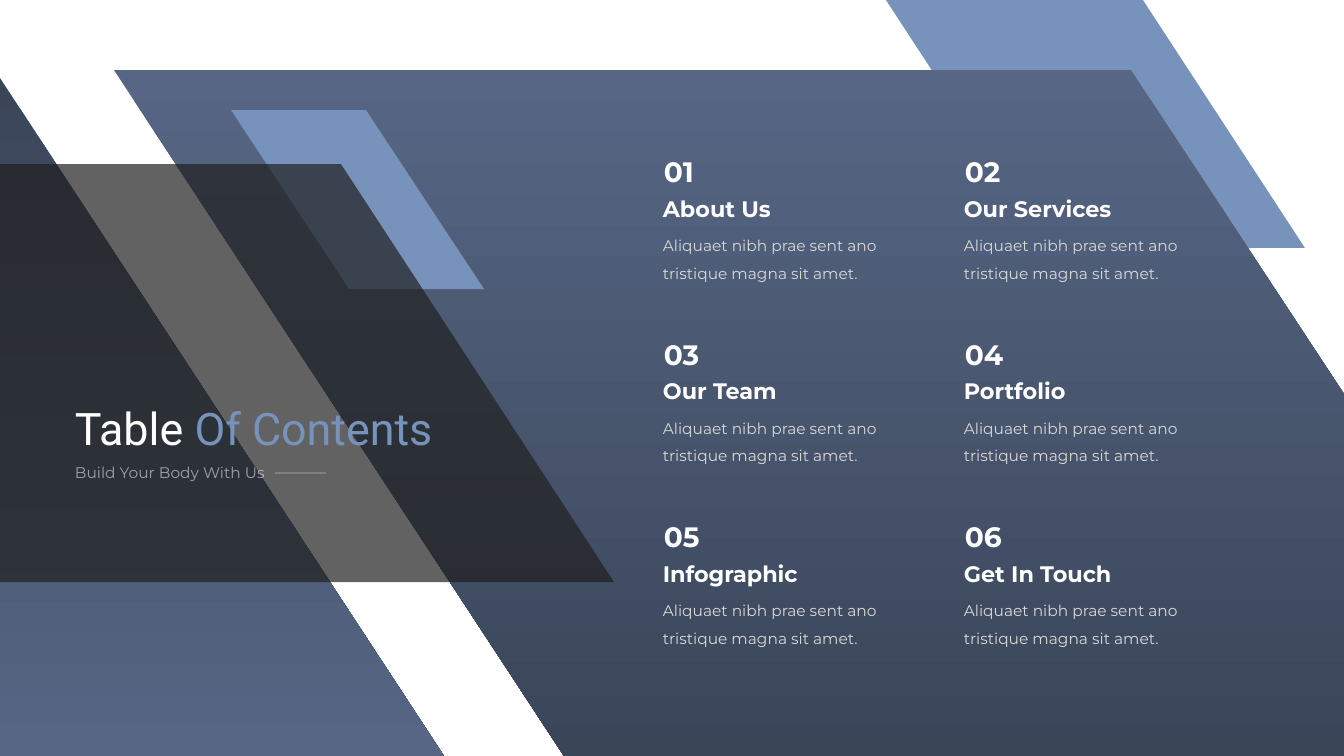
from dataclasses import dataclass

from lxml import etree
from pptx import Presentation
from pptx import util as u
from pptx.dml.color import RGBColor
from pptx.enum import shapes, text
from pptx.oxml import ns

WIDTH, HEIGHT = 1344, 756
EMU_PER_PX = 12192000 / WIDTH


@dataclass(frozen=True)
class Theme:
    white: str = "FFFFFF"
    accent: str = "7793BB"
    slate: str = "566684"
    deep: str = "3A4558"
    shade: str = "202020"
    pale: str = "D9D9D9"
    shade_alpha: int = 70
    muted_alpha: int = 55
    title: tuple = ("Roboto", 32, False)
    number: tuple = ("Montserrat", 20, True)
    heading: tuple = ("Montserrat", 16, True)
    body: tuple = ("Montserrat", 11, False)


THEME = Theme()
BLURB = "Aliquaet nibh prae sent ano tristique magna sit amet."
TOPICS = [
    ("01", 50, "About Us", 135),
    ("02", 56, "Our Services", 182),
    ("03", 56, "Our Team", 151),
    ("04", 59, "Portfolio", 135),
    ("05", 56, "Infographic", 172),
    ("06", 57, "Get In Touch", 172),
]


def px(length):
    return u.Emu(round(length * EMU_PER_PX))


def apply(target, values):
    for name, value in values.items():
        setattr(target, name, value)


def set_alpha(element, percent):
    for color in element.iter(ns.qn("a:srgbClr")):
        etree.SubElement(color, ns.qn("a:alpha"), val=str(percent * 1000))


def add_panel(slide, box, corners, colors, alpha=None):
    left, top = box
    points = [(left + x, top + y) for x, y in corners]
    outline = slide.shapes.build_freeform(*points[0], scale=EMU_PER_PX)
    outline.add_line_segments(points[1:], close=True)
    panel = outline.convert_to_shape()
    panel.shadow.inherit = False
    panel.line.fill.background()
    if len(colors) == 1:
        panel.fill.solid()
        panel.fill.fore_color.rgb = RGBColor.from_string(colors[0])
    else:
        panel.fill.gradient()
        panel.fill.gradient_angle = 270
        for stop, color in zip(panel.fill.gradient_stops, colors):
            stop.color.rgb = RGBColor.from_string(color)
    if alpha:
        set_alpha(panel.element.spPr, alpha)


def add_words(slide, box, style, runs, wrap=True, spacing=None, alpha=None):
    words = slide.shapes.add_textbox(*map(px, box))
    apply(words.text_frame, {
        "word_wrap": wrap,
        "auto_size": text.MSO_AUTO_SIZE.SHAPE_TO_FIT_TEXT,
    })
    paragraph = words.text_frame.paragraphs[0]
    if spacing:
        paragraph.line_spacing = spacing
    face, size, bold = style
    for wording, color in runs:
        run = paragraph.add_run()
        run.text = wording
        apply(run.font, {"name": face, "size": u.Pt(size), "bold": bold})
        run.font.color.rgb = RGBColor.from_string(color)
    if alpha:
        set_alpha(words.element, alpha)


def add_backdrop(slide, box):
    left, top, width, height = box
    gradient = (THEME.slate, THEME.deep)
    add_panel(slide, (left + 886, top),
              [(0, 0), (257, 0), (419, 248), (162, 248)], (THEME.accent,))
    add_panel(slide, (left + 114, top + 70),
              [(0, 0), (1017, 0), (width - 114, 324),
               (width - 114, height - 70), (450, height - 70)], gradient)
    add_panel(slide, (left, top + 78),
              [(0, 0), (0, height - 78), (444, height - 78)], gradient[::-1])
    add_panel(slide, (left + 231, top + 110),
              [(0, 0), (135, 0), (253, 179), (118, 179)], (THEME.accent,))


def add_title(slide, box):
    left, top, width, height = box
    add_panel(slide, (left, top),
              [(0, 0), (341, 0), (width, height), (0, height)],
              (THEME.shade,), THEME.shade_alpha)
    add_words(slide, (left + 65, top + 232, 412, 65), THEME.title,
              [("Table ", THEME.white), ("Of Contents", THEME.accent)])
    add_words(slide, (left + 65, top + 294, 213, 29), THEME.body,
              [("Build Your Body With Us", THEME.white)],
              wrap=False, alpha=THEME.muted_alpha)
    dash = slide.shapes.add_connector(
        shapes.MSO_CONNECTOR.STRAIGHT,
        px(left + 275), px(top + 309), px(left + 326), px(top + 309))
    dash.line.width = u.Pt(0.5)
    dash.line.color.rgb = RGBColor.from_string(THEME.white)
    set_alpha(dash.element.spPr, THEME.muted_alpha)
    etree.SubElement(dash.element.spPr, ns.qn("a:effectLst"))


def add_topic(slide, box, topic):
    left, top, width = box
    number, number_width, heading, heading_width = topic
    add_words(slide, (left + 1, top, number_width, 44), THEME.number,
              [(number, THEME.white)], wrap=False)
    add_words(slide, (left, top + 40, heading_width, 37), THEME.heading,
              [(heading, THEME.white)])
    add_words(slide, (left, top + 72, width, 64), THEME.body,
              [(BLURB, THEME.pale)], spacing=1.5)


def add_topics(slide, box):
    left, top, width, height = box
    topic_width = 259
    column_step = width - topic_width
    row_step = (height - 136) / 2
    for index, topic in enumerate(TOPICS):
        row, column = divmod(index, 2)
        add_topic(slide, (left + column * column_step,
                          top + row * row_step, topic_width), topic)


def main():
    deck = Presentation()
    apply(deck, {"slide_width": px(WIDTH), "slide_height": px(HEIGHT)})
    contents = deck.slides.add_slide(deck.slide_layouts[6])
    add_backdrop(contents, (0, 0, WIDTH, HEIGHT))
    add_title(contents, (0, 164, 614, 418))
    add_topics(contents, (653, 150, 560, 501))
    deck.save("out.pptx")


if __name__ == "__main__":
    main()
